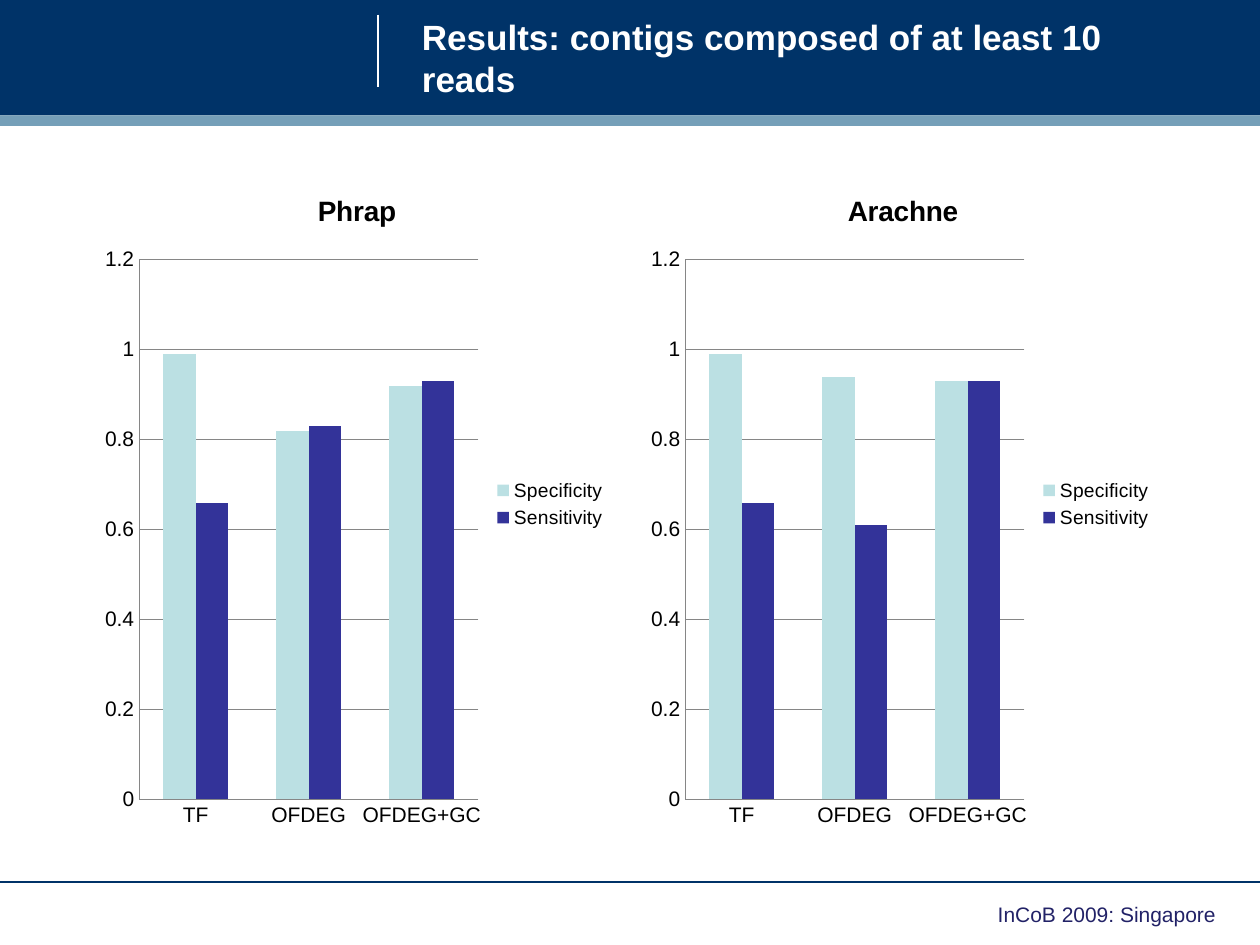
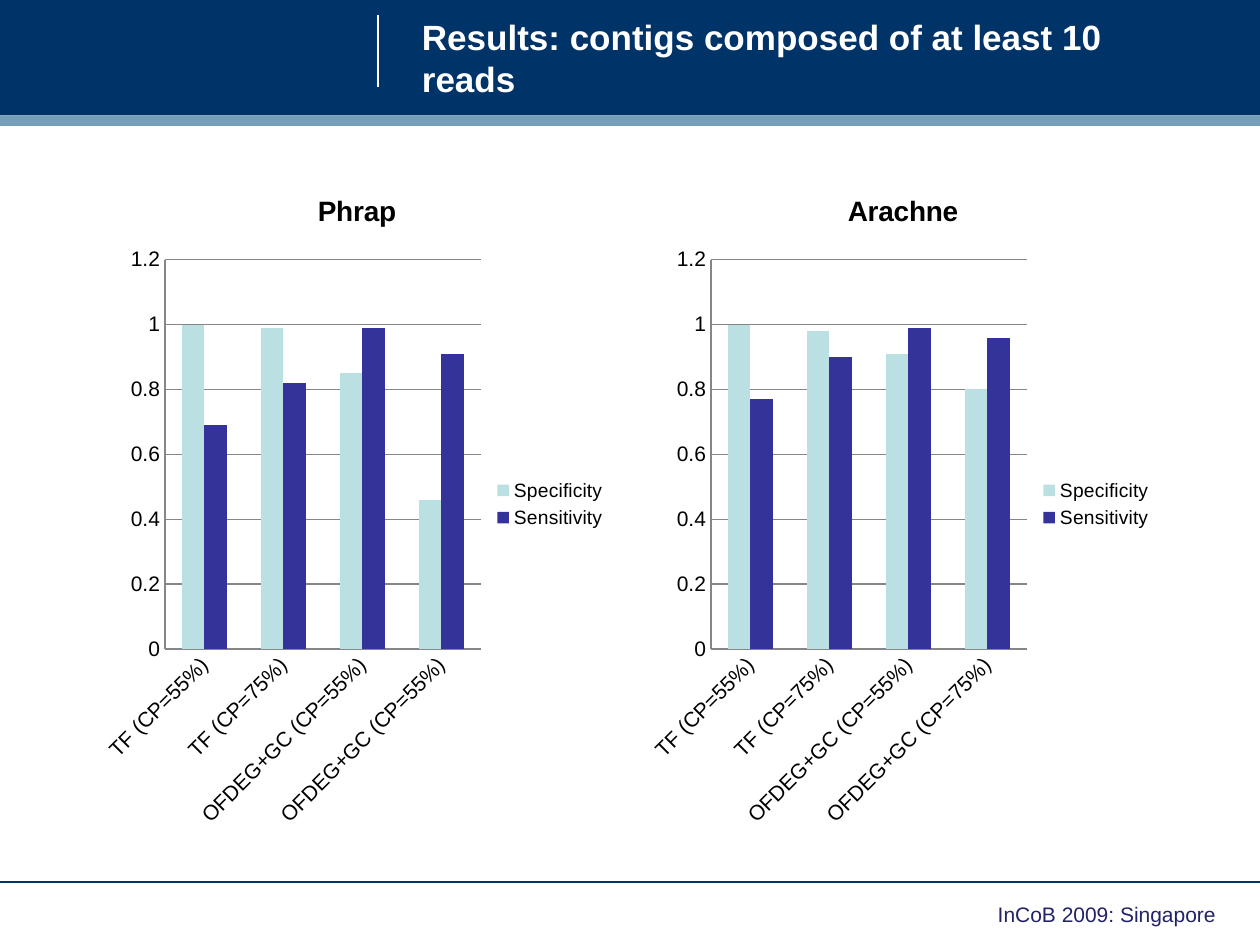
from collections import namedtuple

from lxml.etree import SubElement
from pptx import Presentation
from pptx.chart.data import CategoryChartData
from pptx.dml.color import RGBColor
from pptx.enum.chart import XL_CHART_TYPE as ChartType
from pptx.enum.chart import XL_LEGEND_POSITION as LegendPosition
from pptx.enum.chart import XL_TICK_MARK as TickMark
from pptx.enum.shapes import MSO_CONNECTOR as Connector
from pptx.enum.shapes import MSO_SHAPE as Shape
from pptx.enum.text import MSO_ANCHOR as Anchor
from pptx.enum.text import PP_ALIGN as Align
from pptx.oxml.ns import qn
from pptx.util import Inches, Pt

NAVY = RGBColor(0x00, 0x33, 0x68)
STEEL = RGBColor(0x75, 0x9F, 0xB8)
INDIGO = RGBColor(0x22, 0x22, 0x67)
WHITE = RGBColor(0xFF, 0xFF, 0xFF)
BLACK = RGBColor(0x00, 0x00, 0x00)
GRAY = RGBColor(0x86, 0x86, 0x86)
SERIES_COLORS = {
    "Specificity": RGBColor(0xBB, 0xE0, 0xE3),
    "Sensitivity": RGBColor(0x33, 0x33, 0x99),
}
FONT = "Arial"

SLIDE_WIDTH, SLIDE_HEIGHT = Inches(10), Inches(7.5)
COLUMNS, ROWS = 120, 90
CHART_GAP = 2

Box = namedtuple("Box", "left top width height")
HEADER = Box(0, 0, COLUMNS, 12)
CHARTS = Box(9, 16, 102, 64)
FOOTER = Box(0, 84, COLUMNS, 6)

TITLE = "Results: contigs composed of at least 10 reads"
EVENT = "InCoB 2009: Singapore"

METHODS = ["TF", "OFDEG", "OFDEG+GC"]
SHARED_CUTOFFS = ["TF (CP=55%)", "TF (CP=75%)", "OFDEG+GC (CP=55%)"]
RESULT_SLIDES = [
    {
        "label_angle": 0,
        "assemblers": [
            ("Phrap", METHODS, [0.99, 0.82, 0.92], [0.66, 0.83, 0.93]),
            ("Arachne", METHODS, [0.99, 0.94, 0.93], [0.66, 0.61, 0.93]),
        ],
    },
    {
        "label_angle": -45,
        "assemblers": [
            ("Phrap", SHARED_CUTOFFS + ["OFDEG+GC (CP=55%)"],
             [1, 0.99, 0.85, 0.46], [0.69, 0.82, 0.99, 0.91]),
            ("Arachne", SHARED_CUTOFFS + ["OFDEG+GC (CP=75%)"],
             [1, 0.98, 0.91, 0.8], [0.77, 0.9, 0.99, 0.96]),
        ],
    },
]


def across(columns):
    return round(SLIDE_WIDTH * columns / COLUMNS)


def down(rows):
    return round(SLIDE_HEIGHT * rows / ROWS)


def place(box):
    return across(box.left), down(box.top), across(box.width), down(box.height)


def style_font(font, size, color=BLACK, bold=False):
    font.name = FONT
    font.size = Pt(size)
    font.bold = bold
    font.color.rgb = color


def add_text(slide, box, text, size, color, bold=False, align=Align.LEFT,
             anchor=Anchor.TOP, wrap=True):
    frame = slide.shapes.add_textbox(*place(box)).text_frame
    frame.word_wrap = wrap
    frame.vertical_anchor = anchor
    paragraph = frame.paragraphs[0]
    paragraph.alignment = align
    run = paragraph.add_run()
    run.text = text
    style_font(run.font, size, color, bold)


def add_band(slide, box, color):
    band = slide.shapes.add_shape(Shape.RECTANGLE, *place(box))
    band.shadow.inherit = False
    band.fill.solid()
    band.fill.fore_color.rgb = color
    band.line.fill.background()


def add_rule(slide, start, end, color):
    rule = slide.shapes.add_connector(
        Connector.STRAIGHT, across(start[0]), down(start[1]),
        across(end[0]), down(end[1]))
    rule.line.color.rgb = color
    rule.line.width = Pt(0.75)
    SubElement(rule._element.spPr, qn("a:effectLst"))


def add_header(slide, box, title):
    left, top, width, height = box
    strip_height = 1
    band_height = height - strip_height
    add_band(slide, Box(left, top, width, band_height), NAVY)
    add_band(slide, Box(left, top + band_height, width, strip_height), STEEL)
    rule_x = left + 0.3 * width
    add_rule(slide, (rule_x, top + 1.4), (rule_x, top + 8.25), WHITE)
    add_text(slide, Box(rule_x + 3, top + 1, 76, 9), title, 20, WHITE,
             bold=True, anchor=Anchor.MIDDLE)


def add_footer(slide, box, text):
    left, top, width, height = box
    add_rule(slide, (left, top), (left + width, top), NAVY)
    text_width = 23.3
    text_left = left + width - 3 - text_width
    add_text(slide, Box(text_left, top + 1.3, text_width, 3.6), text, 12,
             INDIGO, align=Align.RIGHT, wrap=False)


def style_axis(axis):
    axis.major_tick_mark = TickMark.NONE
    axis.minor_tick_mark = TickMark.NONE
    axis.format.line.color.rgb = GRAY
    axis.format.line.width = Pt(0.75)
    style_font(axis.tick_labels.font, 12)


def add_result_chart(slide, box, name, categories, values, label_angle):
    chart_data = CategoryChartData()
    chart_data.categories = categories
    for series_name, series_values in zip(SERIES_COLORS, values):
        chart_data.add_series(series_name, series_values)
    chart = slide.shapes.add_chart(
        ChartType.COLUMN_CLUSTERED, *place(box), chart_data).chart
    style_font(chart.font, 18)

    chart.has_title = True
    chart.chart_title.include_in_layout = False
    title_run = chart.chart_title.text_frame.paragraphs[0].add_run()
    title_run.text = name
    style_font(title_run.font, 16, bold=True)

    chart.has_legend = True
    chart.legend.position = LegendPosition.RIGHT
    chart.legend.include_in_layout = False
    style_font(chart.legend.font, 11)

    style_axis(chart.category_axis)
    style_axis(chart.value_axis)
    if label_angle:
        label_body = chart.category_axis._element.txPr.find(qn("a:bodyPr"))
        label_body.set("rot", str(label_angle * 60000))
    chart.value_axis.minimum_scale = 0
    chart.value_axis.maximum_scale = 1.2
    chart.value_axis.major_unit = 0.2
    chart.value_axis.tick_labels.number_format = "General"
    chart.value_axis.tick_labels.number_format_is_linked = False
    chart.value_axis.has_major_gridlines = True
    grid_line = chart.value_axis.major_gridlines.format.line
    grid_line.color.rgb = GRAY
    grid_line.width = Pt(0.75)

    plot = chart.plots[0]
    plot.vary_by_categories = False
    plot.gap_width = 150
    plot.overlap = 0
    for series in plot.series:
        series.format.fill.solid()
        series.format.fill.fore_color.rgb = SERIES_COLORS[series.name]


def add_chart_row(slide, box, assemblers, label_angle):
    count = len(assemblers)
    chart_width = (box.width - CHART_GAP * (count - 1)) / count
    for index, (name, categories, *values) in enumerate(assemblers):
        left = box.left + index * (chart_width + CHART_GAP)
        chart_box = Box(left, box.top, chart_width, box.height)
        add_result_chart(slide, chart_box, name, categories, values,
                         label_angle)


def add_result_slide(presentation, assemblers, label_angle):
    slide = presentation.slides.add_slide(presentation.slide_layouts[6])
    add_header(slide, HEADER, TITLE)
    add_chart_row(slide, CHARTS, assemblers, label_angle)
    add_footer(slide, FOOTER, EVENT)


def main():
    presentation = Presentation()
    presentation.slide_width = SLIDE_WIDTH
    presentation.slide_height = SLIDE_HEIGHT
    for result in RESULT_SLIDES:
        add_result_slide(presentation, **result)
    presentation.save("out.pptx")


if __name__ == "__main__":
    main()
